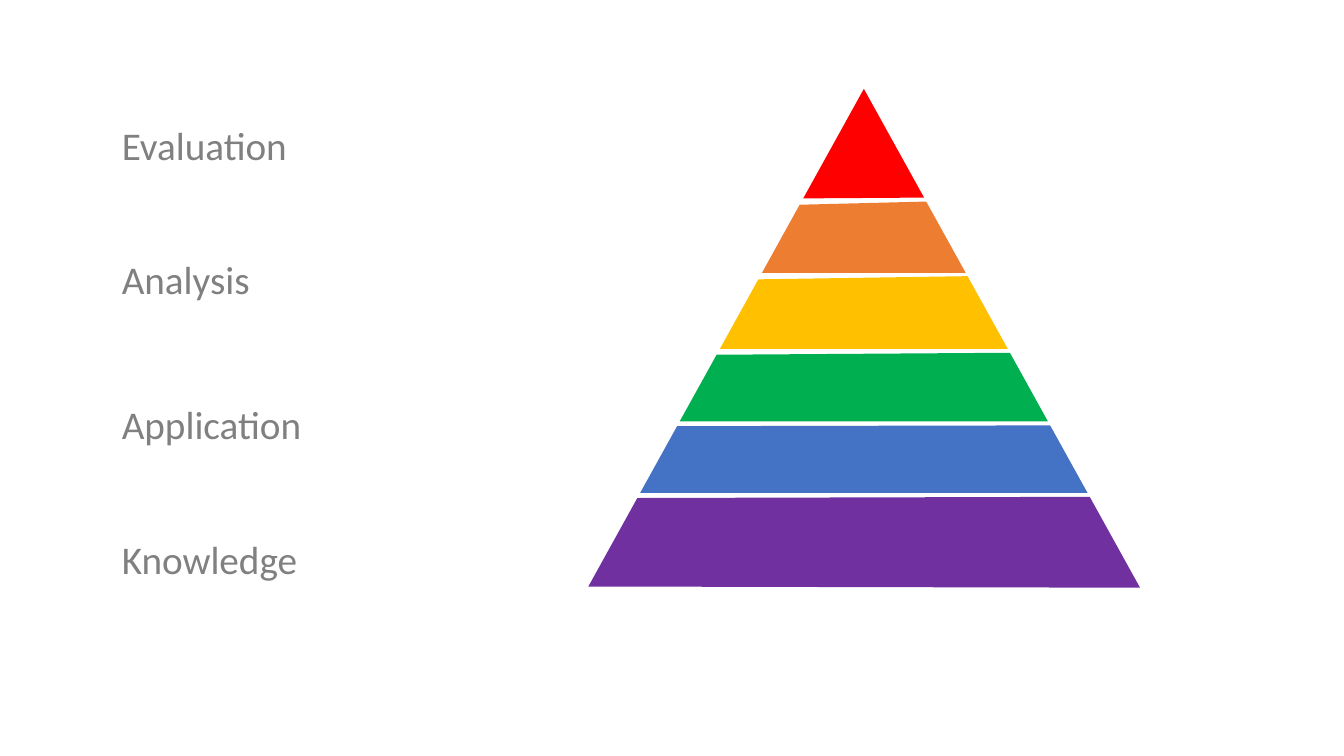
from dataclasses import dataclass

from pptx import Presentation
from pptx.dml.color import RGBColor
from pptx.enum.text import MSO_AUTO_SIZE as AutoSize
from pptx.util import Cm, Pt

# Content: label with its top, in cm, from the bottom up
LABELS = [
    ("Knowledge", 13.36),
    ("Application", 9.96),
    ("Analysis", 6.32),
    ("Evaluation", 2.92),
]

# Pyramid bands from the bottom up: colour, then the heights in cm
# of the edges (top left, top right), (bottom left, bottom right)
BANDS = [
    ("7030A0", (12.55, 12.52), (14.78, 14.81)),
    ("4472C4", (10.74, 10.72), (12.42, 12.42)),
    ("00B050", (8.94, 8.89), (10.62, 10.62)),
    ("FFC000", (7.04, 6.96), (8.79, 8.79)),
    ("ED7D31", (5.16, 5.08), (6.88, 6.88)),
    ("FF0000", (2.24, 2.24), (5.0, 4.98)),
]

APEX_X, APEX_Y = 21.77, 2.24
SLOPE = 6.96 / 12.57  # half width gained per unit of height
LABEL_LEFT, LABEL_WIDTH, LABEL_HEIGHT = 2.82, 12.93, 1.45


@dataclass(frozen=True)
class Theme:
    font: str = "Calibri"
    label_size: int = 28
    label_color: str = "808080"


THEME = Theme()


def add_label(page, text, top):
    box = page.shapes.add_textbox(
        Cm(LABEL_LEFT), Cm(top), Cm(LABEL_WIDTH), Cm(LABEL_HEIGHT))
    frame = box.text_frame
    frame.word_wrap = True
    frame.auto_size = AutoSize.SHAPE_TO_FIT_TEXT
    span = frame.paragraphs[0].add_run()
    span.text = text
    span.font.name = THEME.font
    span.font.size = Pt(THEME.label_size)
    span.font.color.rgb = RGBColor.from_string(THEME.label_color)


def side_point(height, side):
    """Point on the left (-1) or right (+1) side of the pyramid."""
    return Cm(APEX_X + side * SLOPE * (height - APEX_Y)), Cm(height)


def add_band(pyramid, color, top, bottom):
    corners = [side_point(bottom[0], -1), side_point(bottom[1], 1),
               side_point(top[1], 1), side_point(top[0], -1)]
    corners = list(dict.fromkeys(corners))  # the two top corners meet at the apex
    outline = pyramid.shapes.build_freeform(*corners[0])
    outline.add_line_segments(corners[1:], close=True)
    band = outline.convert_to_shape()
    band.shadow.inherit = False
    band.fill.solid()
    band.fill.fore_color.rgb = RGBColor.from_string(color)
    band.line.fill.background()


def main():
    deck = Presentation()
    deck.slide_width, deck.slide_height = Cm(33.87), Cm(19.05)
    page = deck.slides.add_slide(deck.slide_layouts[6])

    # Labels on the left
    for text, top in LABELS:
        add_label(page, text, top)

    # Pyramid on the right
    pyramid = page.shapes.add_group_shape()
    for color, top, bottom in BANDS:
        add_band(pyramid, color, top, bottom)

    deck.save("out.pptx")


if __name__ == "__main__":
    main()
